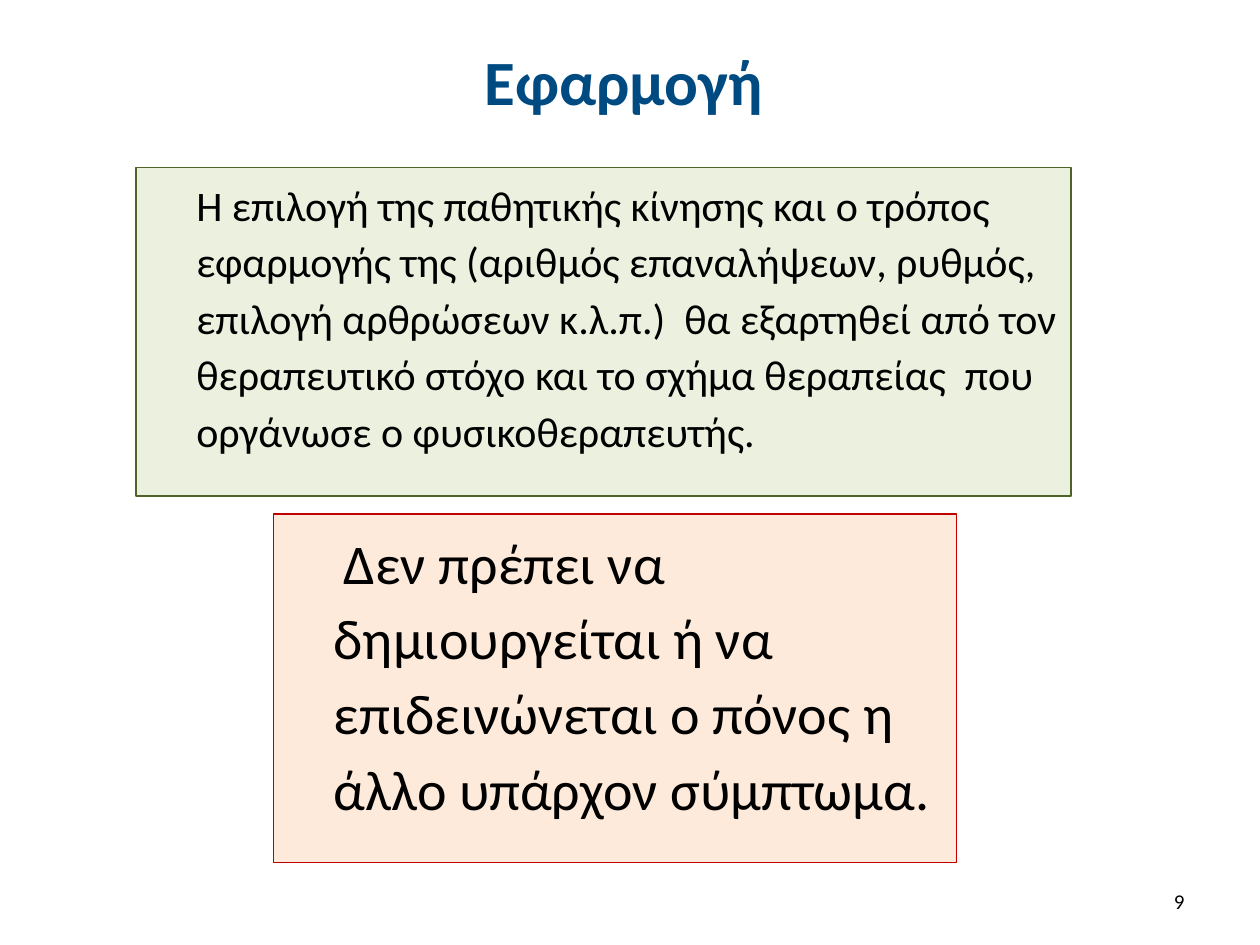
from dataclasses import dataclass

from pptx import Presentation
from pptx.dml.color import RGBColor
from pptx.enum.shapes import MSO_SHAPE
from pptx.enum.text import MSO_ANCHOR, PP_ALIGN
from pptx.util import Inches, Pt

WIDE, HIGH = 10, 7.5


@dataclass(frozen=True)
class Theme:
    font: str = "Calibri"
    ink: str = "000000"
    navy: str = "004A82"
    mint: str = "EBF1DE"
    olive: str = "4F6228"
    peach: str = "FDEADA"
    red: str = "C00000"
    title: int = 36
    large: int = 32
    body: int = 24
    small: int = 12
    edge: float = 0.75
    lines: float = 1.12
    inset: float = 0.38


THEME = Theme()


def place(box):
    """Turn shares of the slide into lengths."""
    left, top, width, height = box
    return [Inches(n) for n in (left * WIDE, top * HIGH, width * WIDE, height * HIGH)]


def write(shape, text, size, color=THEME.ink, bold=False, align=PP_ALIGN.LEFT,
          anchor=MSO_ANCHOR.MIDDLE, lines=1.0, inset=0, first=0):
    """Fill a shape with one paragraph; inset and first-line indent are inches."""
    frame = shape.text_frame
    frame.word_wrap = True
    frame.vertical_anchor = anchor
    para = frame.paragraphs[0]
    props = para._p.get_or_add_pPr()
    props.set("marL", str(Inches(inset)))
    props.set("indent", str(Inches(first)))
    para.alignment = align
    para.line_spacing = lines
    run = para.add_run()
    run.text = text
    font = run.font
    font.name, font.size, font.bold = THEME.font, Pt(size), bold
    font.color.rgb = RGBColor.from_string(color)


def label(slide, box, text, size, **style):
    write(slide.shapes.add_textbox(*place(box)), text, size, **style)


def panel(slide, box, text, size, fill, line, first=0):
    shape = slide.shapes.add_shape(MSO_SHAPE.RECTANGLE, *place(box))
    shape.shadow.inherit = False
    shape.fill.solid()
    shape.fill.fore_color.rgb = RGBColor.from_string(fill)
    shape.line.color.rgb = RGBColor.from_string(line)
    shape.line.width = Pt(THEME.edge)
    write(shape, text, size, anchor=MSO_ANCHOR.TOP, lines=THEME.lines,
          inset=THEME.inset, first=first)


def main():
    deck = Presentation()
    deck.slide_width, deck.slide_height = Inches(WIDE), Inches(HIGH)
    slide = deck.slides.add_slide(deck.slide_layouts[6])

    label(slide, (0.05, 0.02, 0.89, 0.13), "Εφαρμογή", THEME.title,
          color=THEME.navy, bold=True, align=PP_ALIGN.CENTER)
    panel(slide, (0.108, 0.177, 0.742, 0.348),
          "Η επιλογή της παθητικής κίνησης και ο τρόπος εφαρμογής της "
          "(αριθμός επαναλήψεων, ρυθμός, επιλογή αρθρώσεων κ.λ.π.)  θα "
          "εξαρτηθεί από τον θεραπευτικό στόχο και το σχήμα θεραπείας  που "
          "οργάνωσε ο φυσικοθεραπευτής.",
          THEME.body, THEME.mint, THEME.olive)
    panel(slide, (0.217, 0.544, 0.542, 0.369),
          "Δεν πρέπει να δημιουργείται ή να επιδεινώνεται ο πόνος η άλλο "
          "υπάρχον σύμπτωμα.",
          THEME.large, THEME.peach, THEME.red, first=0.08)
    label(slide, (0.717, 0.927, 0.233, 0.053), "9", THEME.small,
          align=PP_ALIGN.RIGHT)

    deck.save("out.pptx")


if __name__ == "__main__":
    main()
